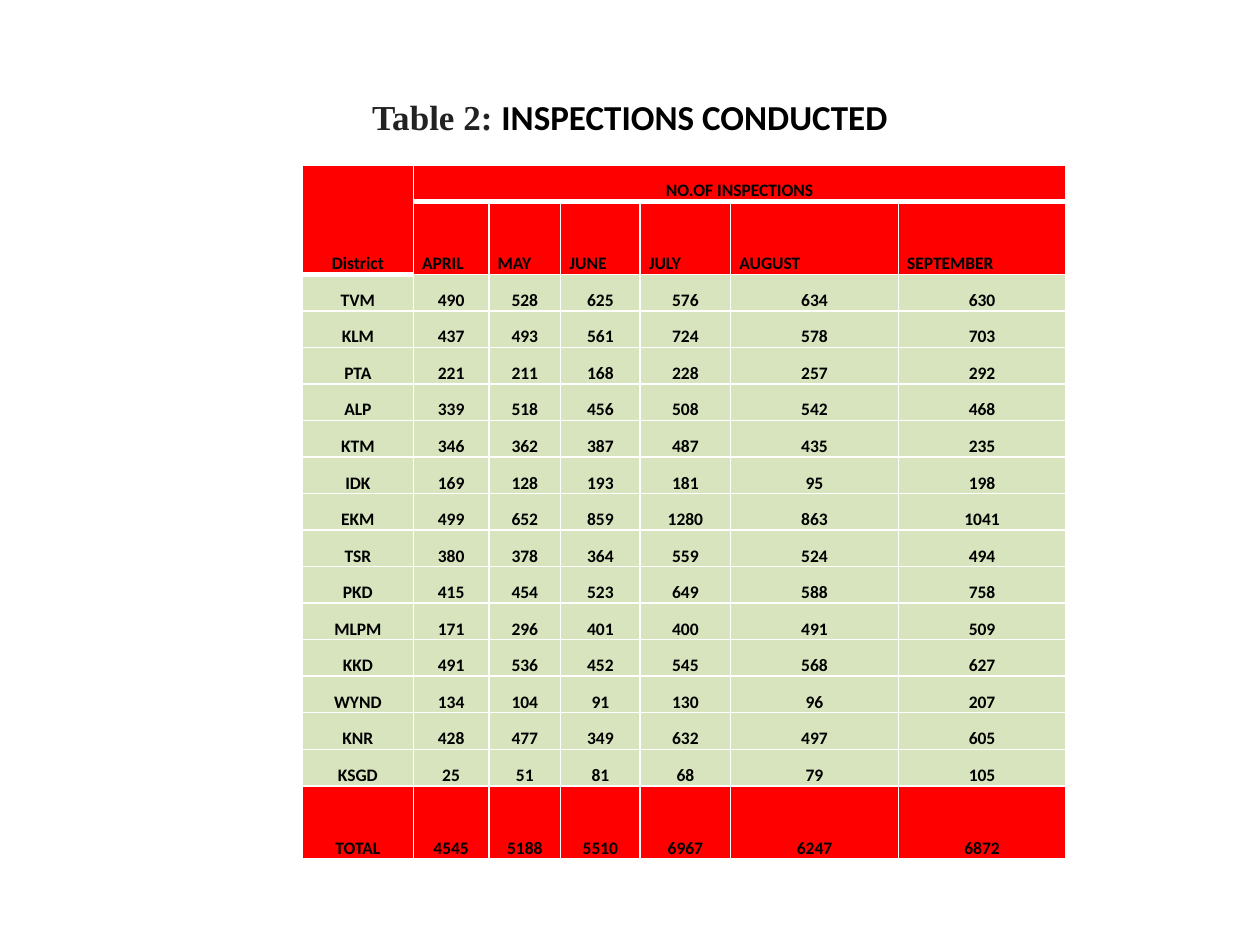
from dataclasses import dataclass

from lxml import etree
from pptx import Presentation
from pptx.dml.color import RGBColor
from pptx.enum.text import MSO_ANCHOR, PP_ALIGN
from pptx.oxml.ns import qn
from pptx.util import Inches, Pt

CENTER, LEFT = PP_ALIGN.CENTER, PP_ALIGN.LEFT
MIDDLE, BOTTOM = MSO_ANCHOR.MIDDLE, MSO_ANCHOR.BOTTOM


@dataclass(frozen=True)
class Theme:
    ink: str = "000000"
    label: str = "222222"
    band: str = "FF0000"
    body: str = "D7E4BD"
    rule: str = "FFFFFF"
    sans: str = "Calibri"
    serif: str = "Times New Roman"
    title_size: int = 20
    cell_size: int = 10
    thin: int = 1
    thick: int = 3


THEME = Theme()

MONTHS = ["APRIL", "MAY", "JUNE", "JULY", "AUGUST", "SEPTEMBER"]
INSPECTIONS = [
    ("TVM", 490, 528, 625, 576, 634, 630),
    ("KLM", 437, 493, 561, 724, 578, 703),
    ("PTA", 221, 211, 168, 228, 257, 292),
    ("ALP", 339, 518, 456, 508, 542, 468),
    ("KTM", 346, 362, 387, 487, 435, 235),
    ("IDK", 169, 128, 193, 181, 95, 198),
    ("EKM", 499, 652, 859, 1280, 863, 1041),
    ("TSR", 380, 378, 364, 559, 524, 494),
    ("PKD", 415, 454, 523, 649, 588, 758),
    ("MLPM", 171, 296, 401, 400, 491, 509),
    ("KKD", 491, 536, 452, 545, 568, 627),
    ("WYND", 134, 104, 91, 130, 96, 207),
    ("KNR", 428, 477, 349, 632, 497, 605),
    ("KSGD", 25, 51, 81, 68, 79, 105),
]
TOTALS = ("TOTAL", 4545, 5188, 5510, 6967, 6247, 6872)
COLUMN_SHARES = [0.88, 0.6, 0.57, 0.63, 0.72, 1.33, 1.33]


def add_run(paragraph, text, size, font, color):
    run = paragraph.add_run()
    run.text = text
    run.font.size = Pt(size)
    run.font.name = font
    run.font.bold = True
    run.font.color.rgb = RGBColor.from_string(color)


def add_title(slide, left, top, width, height):
    frame = slide.shapes.add_textbox(left, top, width, height).text_frame
    frame.word_wrap = True
    frame.vertical_anchor = MIDDLE
    heading = frame.paragraphs[0]
    heading.alignment = CENTER
    add_run(heading, "Table 2: ", THEME.title_size, THEME.serif, THEME.label)
    add_run(heading, "INSPECTIONS CONDUCTED", THEME.title_size, THEME.sans, THEME.ink)


def set_borders(cell, top, bottom):
    """Rule all four sides; top and bottom are widths in points."""
    properties = cell._tc.get_or_add_tcPr()
    widths = {"a:lnL": THEME.thin, "a:lnR": THEME.thin, "a:lnT": top, "a:lnB": bottom}
    for side, width in widths.items():
        line = etree.SubElement(properties, qn(side), w=str(Pt(width)))
        fill = etree.SubElement(line, qn("a:solidFill"))
        etree.SubElement(fill, qn("a:srgbClr"), val=THEME.rule)


def style_cell(cell, color):
    cell.fill.solid()
    cell.fill.fore_color.rgb = RGBColor.from_string(color)
    cell.vertical_anchor = BOTTOM
    cell.margin_left = cell.margin_right = Inches(0.07)
    cell.margin_top = cell.margin_bottom = 0


def write_cell(cell, text, alignment):
    paragraph = cell.text_frame.paragraphs[0]
    paragraph.alignment = alignment
    paragraph.line_spacing = 1.15
    add_run(paragraph, text, THEME.cell_size, THEME.sans, THEME.ink)


def add_inspections_table(slide, left, top, width, height):
    rows = [["District", "NO.OF INSPECTIONS"], [None, *MONTHS], *INSPECTIONS, TOTALS]
    last = len(rows) - 1
    column_count = len(COLUMN_SHARES)
    table = slide.shapes.add_table(
        len(rows), column_count, left, top, width, height).table
    table.first_row = table.horz_banding = False

    for column, share in zip(table.columns, COLUMN_SHARES):
        column.width = int(width * share / sum(COLUMN_SHARES))
    tall_rows = (1, last)
    unit = height / (len(rows) + len(tall_rows))
    for r, row in enumerate(table.rows):
        row.height = int(unit * (2 if r in tall_rows else 1))

    table.cell(0, 0).merge(table.cell(1, 0))
    table.cell(0, 1).merge(table.cell(0, column_count - 1))

    def bottom_rule(r, c):
        return THEME.thick if r == 0 or (r, c) == (1, 0) else THEME.thin

    for r, texts in enumerate(rows):
        for c in range(column_count):
            cell = table.cell(r, c)
            above = bottom_rule(r - 1, c) if r > 1 or (r == 1 and c) else THEME.thin
            set_borders(cell, above, bottom_rule(r, c))
            style_cell(cell, THEME.band if r in (0, 1, last) else THEME.body)
            if c < len(texts) and texts[c] is not None:
                write_cell(cell, str(texts[c]), LEFT if r == 1 else CENTER)


def main():
    deck = Presentation()
    deck.slide_width, deck.slide_height = Inches(10), Inches(7.5)
    slide = deck.slides.add_slide(deck.slide_layouts[6])
    add_title(slide, Inches(0.5), Inches(0.3), Inches(9), Inches(1.25))
    add_inspections_table(slide, Inches(2.4), Inches(1.31), Inches(6.06), Inches(5.51))
    deck.save("out.pptx")


if __name__ == "__main__":
    main()
